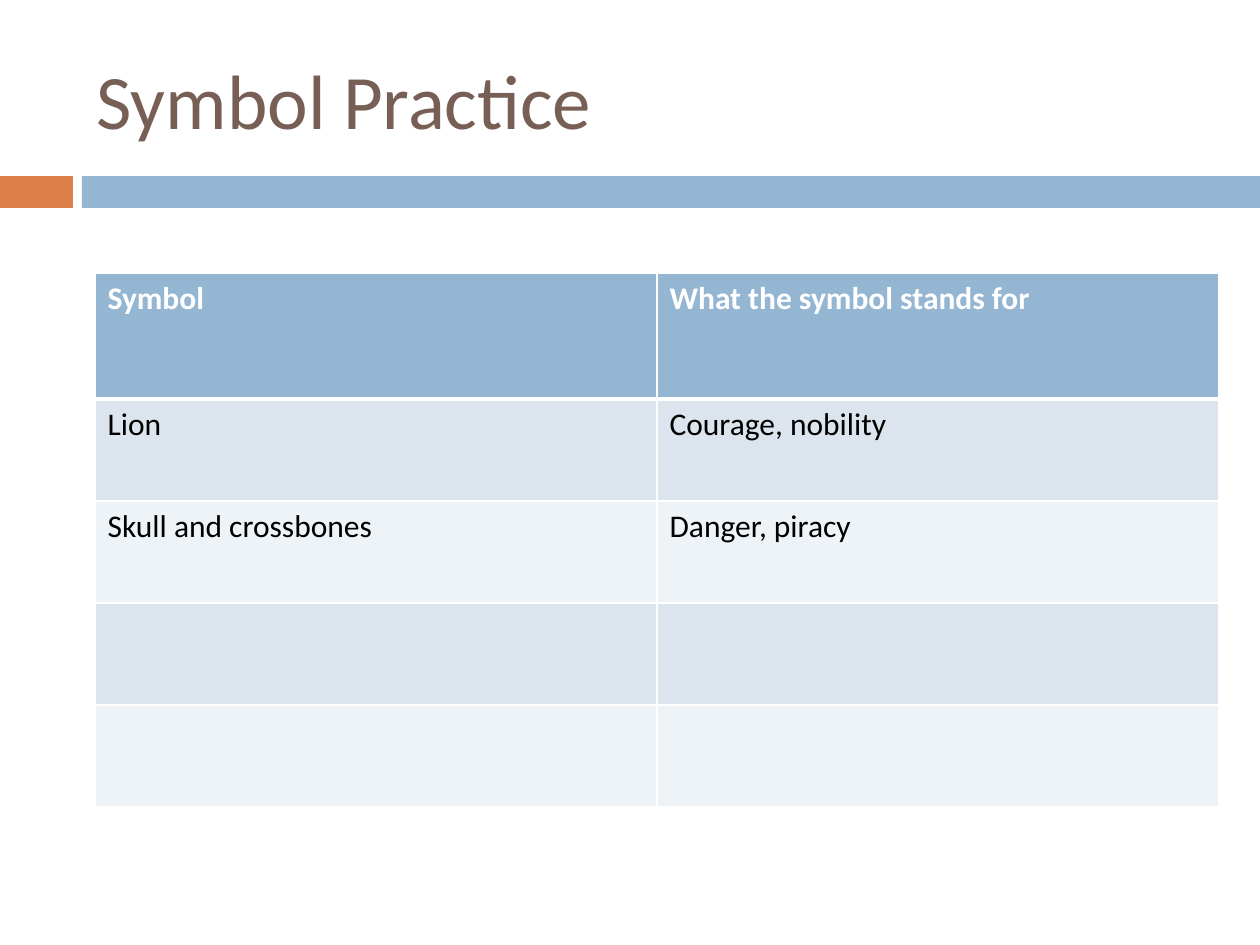
"""Build the Symbol Practice slide with its two-column table."""
import pptx
import pptx.dml.color
import pptx.enum.shapes
import pptx.enum.text
import pptx.oxml
import pptx.oxml.ns
import pptx.util

TITLE = "Symbol Practice"
ROWS = [
    ("Symbol", "What the symbol stands for"),
    ("Lion", "Courage, nobility"),
    ("Skull and crossbones", "Danger, piracy"),
    ("", ""),
    ("", ""),
]
BARS = [((0, 176, 73, 32), "DD8047"), ((82, 176, 1178, 32), "94B6D2")]
TITLE_BOX = (84, 31, 1124, 136)
TABLE_LEFT, TABLE_TOP = 95, 273
COLUMN_WIDTH, HEADER_HEIGHT, ROW_HEIGHT = 562, 126, 102
HEADER_FILL, BAND_FILLS = "94B6D2", ("DCE5EE", "EEF3F7")
THIN, THICK = 1, 3


def px(length):
    return pptx.util.Emu(round(length * 914400 / 126))


def color(value):
    return pptx.dml.color.RGBColor.from_string(value)


def write(frame, text, size=18, ink="000000", bold=False):
    run = frame.paragraphs[0].add_run()
    run.text = text
    run.font.name = "Calibri"
    run.font.size = pptx.util.Pt(size)
    run.font.bold = bold
    run.font.color.rgb = color(ink)


def add_borders(cell, top, bottom):
    properties = cell._tc.get_or_add_tcPr()
    sides = [("L", THIN), ("R", THIN), ("T", top), ("B", bottom)]
    for index, (side, points) in enumerate(sides):
        properties.insert(index, pptx.oxml.parse_xml(
            f'<a:ln{side} {pptx.oxml.ns.nsdecls("a")} w="{pptx.util.Pt(points)}">'
            f'<a:solidFill><a:srgbClr val="FFFFFF"/></a:solidFill></a:ln{side}>'))


def add_bar(slide, box, fill):
    shape = slide.shapes.add_shape(
        pptx.enum.shapes.MSO_SHAPE.RECTANGLE, *map(px, box))
    shape.shadow.inherit = False
    shape.fill.solid()
    shape.fill.fore_color.rgb = color(fill)
    shape.line.fill.background()


def add_title(slide):
    frame = slide.shapes.add_textbox(*map(px, TITLE_BOX)).text_frame
    frame.word_wrap = True
    frame.vertical_anchor = pptx.enum.text.MSO_ANCHOR.MIDDLE
    write(frame, TITLE, size=44, ink="775F55")


def add_symbol_table(slide):
    heights = [HEADER_HEIGHT] + [ROW_HEIGHT] * (len(ROWS) - 1)
    columns = len(ROWS[0])
    box = (TABLE_LEFT, TABLE_TOP, COLUMN_WIDTH * columns, sum(heights))
    table = slide.shapes.add_table(len(ROWS), columns, *map(px, box)).table
    for column in table.columns:
        column.width = px(COLUMN_WIDTH)
    for number, texts in enumerate(ROWS):
        header = number == 0
        table.rows[number].height = px(heights[number])
        fill = HEADER_FILL if header else BAND_FILLS[(number - 1) % 2]
        for cell, text in zip(table.rows[number].cells, texts):
            cell.fill.solid()
            cell.fill.fore_color.rgb = color(fill)
            add_borders(cell, top=THICK if number == 1 else THIN,
                        bottom=THICK if header else THIN)
            if text:
                write(cell.text_frame, text, bold=header,
                      ink="FFFFFF" if header else "000000")


def main():
    presentation = pptx.Presentation()
    presentation.slide_width, presentation.slide_height = px(1260), px(945)
    slide = presentation.slides.add_slide(presentation.slide_layouts[6])
    for box, fill in BARS:
        add_bar(slide, box, fill)
    add_title(slide)
    add_symbol_table(slide)
    presentation.save("out.pptx")


if __name__ == "__main__":
    main()
